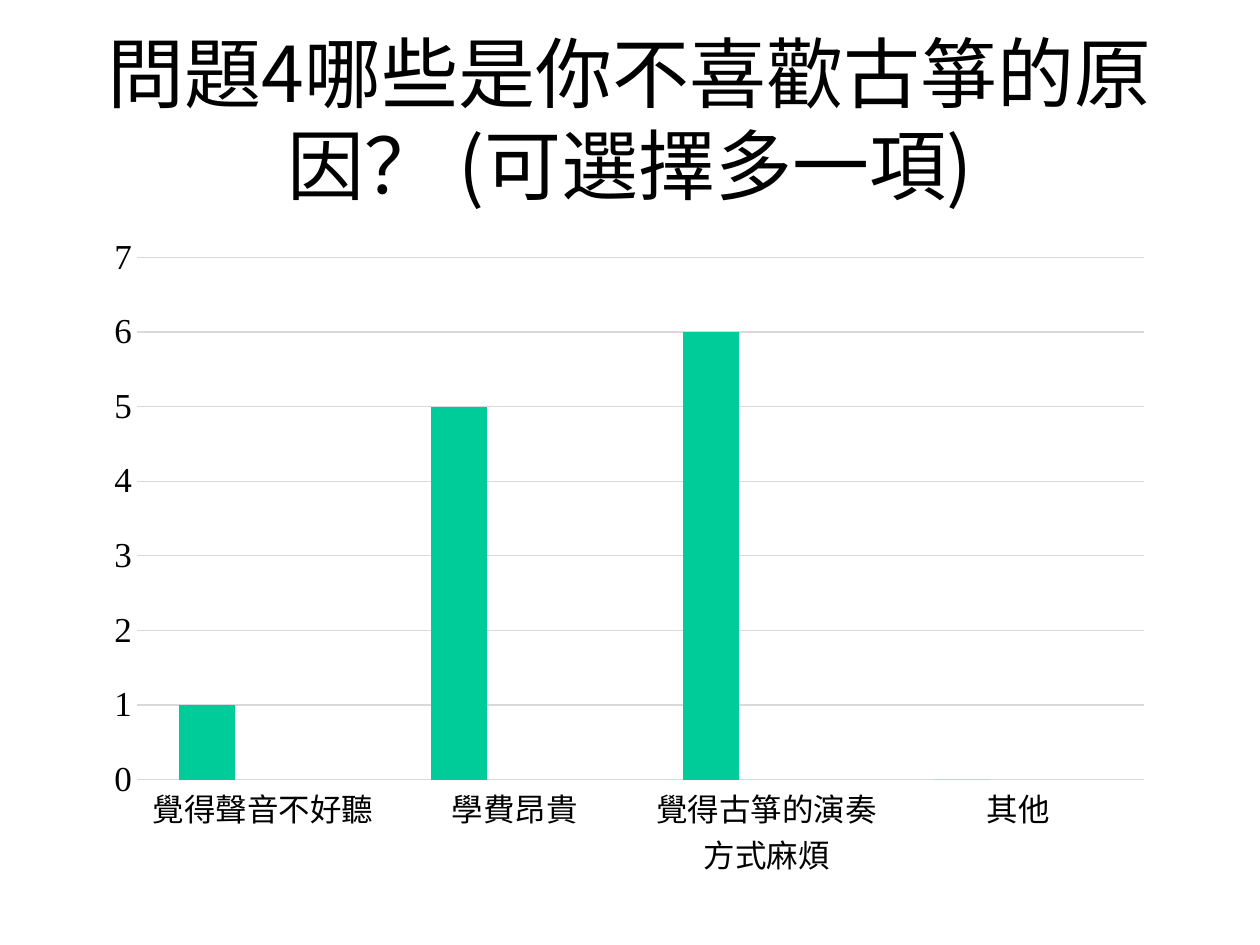
from lxml import etree
from pptx import Presentation
from pptx import util as u
from pptx.chart.data import CategoryChartData
from pptx.dml.color import RGBColor
from pptx.enum import chart as charts, text
from pptx.oxml import ns

COLORS = {"text": "000000", "grid": "D9D9D9", "first": "00CC99", "second": "3333CC", "third": "FFFFFF"}
CJK_FONT = "Noto Sans CJK SC"
LATIN_FONT = "Times New Roman"
TITLE = "問題4哪些是你不喜歡古箏的原因？ (可選擇多一項)"
REASONS = ["覺得聲音不好聽", "學費昂貴", "覺得古箏的演奏方式麻煩", "其他"]
SERIES = [
    ("Series 1", [1, 5, 6, 0], "first"),
    ("Series 2", [None] * 4, "second"),
    ("Series 3", [None] * 4, "third"),
]


def color(name):
    return RGBColor.from_string(COLORS[name])


def style_font(font, name, size):
    font.name = name
    font.size = u.Pt(size)
    font.color.rgb = color("text")


def add_east_asian_font(root, name):
    for latin in root.findall(".//" + ns.qn("a:latin")):
        east_asian = etree.Element(ns.qn("a:ea"), typeface=name)
        latin.addnext(east_asian)


def set_plot_area(chart, x, y, w, h):
    plot_area = chart.plots[0]._element.getparent()
    layout = plot_area.find(ns.qn("c:layout"))
    if layout is None:
        layout = etree.Element(ns.qn("c:layout"))
        plot_area.insert(0, layout)
    manual = etree.SubElement(layout, ns.qn("c:manualLayout"))
    settings = {"layoutTarget": "inner", "xMode": "edge", "yMode": "edge", "x": x, "y": y, "w": w, "h": h}
    for tag, value in settings.items():
        etree.SubElement(manual, ns.qn("c:" + tag), val=str(value))


def place_title(slide, left, top, width, height):
    title = slide.shapes.title
    title.left, title.top, title.width, title.height = left, top, width, height
    frame = title.text_frame
    frame.text = TITLE
    frame.word_wrap = True
    frame.auto_size = text.MSO_AUTO_SIZE.NONE
    frame.vertical_anchor = text.MSO_ANCHOR.BOTTOM
    frame.margin_bottom = u.Cm(0.64)
    paragraph = frame.paragraphs[0]
    paragraph.alignment = text.PP_ALIGN.CENTER
    style_font(paragraph.font, CJK_FONT, 44)
    add_east_asian_font(title._element, CJK_FONT)


def place_reason_chart(slide, left, top, width, height):
    data = CategoryChartData()
    data.categories = REASONS
    for name, values, _ in SERIES:
        data.add_series(name, values)
    chart = slide.shapes.add_chart(
        charts.XL_CHART_TYPE.COLUMN_CLUSTERED, left, top, width, height, data
    ).chart
    chart.has_legend = False
    chart.has_title = False
    style_font(chart.font, LATIN_FONT, 10)

    plot = chart.plots[0]
    plot.gap_width = 150
    plot.overlap = 0
    plot.vary_by_categories = False
    for series, (_, _, fill) in zip(plot.series, SERIES):
        series.format.fill.solid()
        series.format.fill.fore_color.rgb = color(fill)

    axes = [(chart.category_axis, CJK_FONT, 18), (chart.value_axis, LATIN_FONT, 20)]
    for axis, font_name, size in axes:
        axis.major_tick_mark = charts.XL_TICK_MARK.NONE
        axis.minor_tick_mark = charts.XL_TICK_MARK.NONE
        axis.format.line.fill.background()
        style_font(axis.tick_labels.font, font_name, size)
        add_east_asian_font(axis._element, font_name)

    value_axis = chart.value_axis
    value_axis.minimum_scale, value_axis.maximum_scale, value_axis.major_unit = 0, 7, 1
    value_axis.has_major_gridlines = True
    grid_line = value_axis.major_gridlines.format.line
    grid_line.color.rgb = color("grid")
    grid_line.width = u.Pt(0.75)
    set_plot_area(chart, 0.04, 0.05, 0.94, 0.785)


def main():
    presentation = Presentation()
    presentation.slide_width, presentation.slide_height = u.Cm(25.4), u.Cm(19.05)
    slide = presentation.slides.add_slide(presentation.slide_layouts[5])
    left, width = u.Cm(1.9), u.Cm(21.6)
    place_title(slide, left, u.Cm(1.7), width, u.Cm(3.18))
    place_reason_chart(slide, left, u.Cm(4.52), width, u.Cm(13.41))
    presentation.save("out.pptx")


if __name__ == "__main__":
    main()
